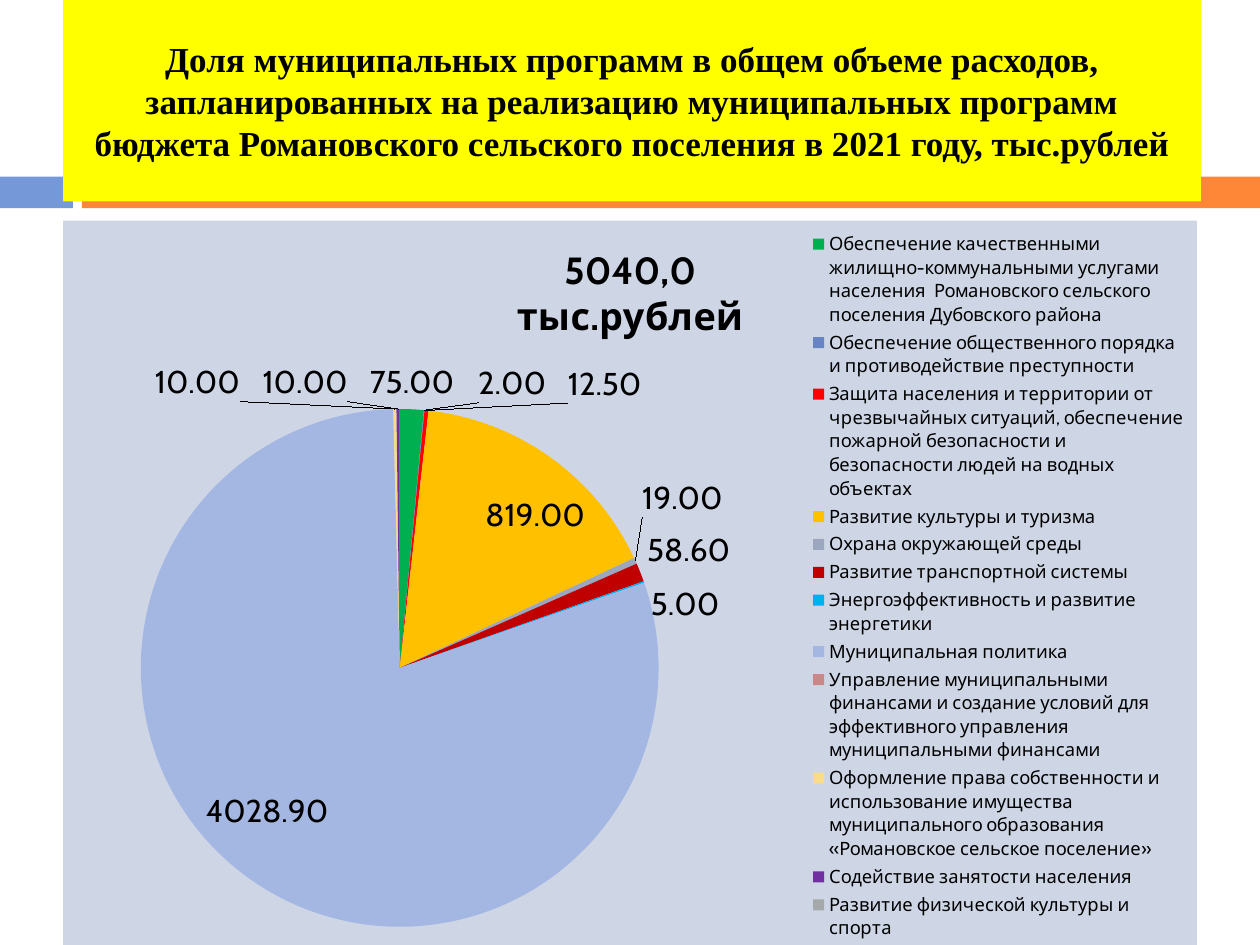
import pptx
import pptx.chart.data
import pptx.dml.color
import pptx.enum.chart
import pptx.enum.shapes
import pptx.enum.text
import pptx.oxml
import pptx.oxml.ns
import pptx.util

Cm = pptx.util.Cm
Pt = pptx.util.Pt
qn = pptx.oxml.ns.qn
LabelPos = pptx.enum.chart.XL_LABEL_POSITION


class Theme:
    """Colours, fonts and type sizes of the slide."""
    blue, orange, yellow = "7598D9", "FE8637", "FFFF00"
    panel, text = "CED6E6", "000000"
    title_font, chart_font = "Times New Roman", "Cabin"
    title_size, chart_title_size = 20, 21.6
    label_size, legend_size = 18, 10.5


# Programme, thousand roubles, colour, label shift (percent of chart width, height)
PROGRAMMES = [
    ("Обеспечение качественными жилищно-коммунальными услугами населения  "
     "Романовского сельского поселения Дубовского района", 75, "00B050", (0, 0)),
    ("Обеспечение общественного порядка и противодействие преступности",
     2, "6685C2", (4.7, 0)),
    ("Защита населения и территории от чрезвычайных ситуаций, обеспечение пожарной "
     "безопасности и безопасности людей на водных объектах", 12.5, "FF0000", (12.4, 0)),
    ("Развитие культуры и туризма", 819, "FFC000", (5.3, -6.5)),
    ("Охрана окружающей среды", 19, "9CA6BE", (0, -5.6)),
    ("Развитие транспортной системы", 58.6, "C00000", (0, 0)),
    ("Энергоэффективность и развитие энергетики", 5, "00B0F0", (0, 6.1)),
    ("Муниципальная политика", 4028.9, "A4B6E2", (-5.2, 5.1)),
    ("Управление муниципальными финансами и создание условий для эффективного "
     "управления муниципальными финансами", 0, "CA8787", None),
    ("Оформление права собственности и использование имущества муниципального "
     "образования «Романовское сельское поселение»", 10, "F9DC8A", (-17.4, 0)),
    ("Содействие занятости населения", 10, "7030A0", (-8.2, 0)),
    ("Развитие физической культуры и спорта", 0, "A5A9A9", None),
]
LARGE_SLICE = 500  # slices above this carry their label inside


def rgb(value):
    return pptx.dml.color.RGBColor.from_string(value)


def layout_xml(x, y, w=None, h=None, inner=False, edge=True):
    """Manual chart layout in percent; without edge, x and y are shifts."""
    parts = []
    if inner:
        parts.append(("layoutTarget", "inner"))
    if edge:
        parts += [("xMode", "edge"), ("yMode", "edge")]
    parts += [("x", x / 100), ("y", y / 100)]
    if w:
        parts += [("w", w / 100), ("h", h / 100)]
    body = "".join(f'<c:{tag} val="{val}"/>' for tag, val in parts)
    return pptx.oxml.parse_xml(
        f'<c:layout {pptx.oxml.ns.nsdecls("c")}><c:manualLayout>{body}'
        '</c:manualLayout></c:layout>')


def set_layout(parent, after, layout):
    """Put a layout behind the child named after, replacing any earlier one."""
    for old in parent.findall(qn("c:layout")):
        parent.remove(old)
    if after is None:
        parent.insert(0, layout)
    else:
        parent.find(qn(after)).addnext(layout)


class SlideBuilder:
    def __init__(self, prs, theme):
        self.theme = theme
        self.s = prs.slides.add_slide(prs.slide_layouts[5])

    def style_font(self, font, name, size, bold=False):
        font.name, font.size, font.bold = name, Pt(size), bold
        font.color.rgb = rgb(self.theme.text)

    def bar(self, x, y, w, h, color):
        sp = self.s.shapes.add_shape(pptx.enum.shapes.MSO_SHAPE.RECTANGLE,
                                     Cm(x), Cm(y), Cm(w), Cm(h))
        sp.shadow.inherit = False
        sp.fill.solid()
        sp.fill.fore_color.rgb = rgb(color)
        sp.line.fill.background()

    def title(self, x, y, w, h, text):
        sp = self.s.shapes.title
        sp.left, sp.top, sp.width, sp.height = Cm(x), Cm(y), Cm(w), Cm(h)
        sp.fill.solid()
        sp.fill.fore_color.rgb = rgb(self.theme.yellow)
        tf = sp.text_frame
        tf.text = text
        tf.word_wrap = True
        tf.vertical_anchor = pptx.enum.text.MSO_ANCHOR.MIDDLE
        p = tf.paragraphs[0]
        p.alignment = pptx.enum.text.PP_ALIGN.CENTER
        self.style_font(p.runs[0].font, self.theme.title_font,
                        self.theme.title_size, True)
        # The title lies over the bars
        sp.element.getparent().append(sp.element)

    def pie(self, x, y, w, h, title, rows):
        t = self.theme
        data = pptx.chart.data.CategoryChartData(number_format="0.00")
        data.categories = [row[0] for row in rows]
        data.add_series("Series 1", [row[1] for row in rows])
        chart = self.s.shapes.add_chart(pptx.enum.chart.XL_CHART_TYPE.PIE,
                                        Cm(x), Cm(y), Cm(w), Cm(h), data).chart
        self.style_font(chart.font, t.chart_font, t.label_size)
        space = chart.element
        panel = pptx.oxml.parse_xml(
            f'<c:spPr {pptx.oxml.ns.nsdecls("c", "a")}><a:solidFill>'
            f'<a:srgbClr val="{t.panel}"/></a:solidFill>'
            '<a:ln><a:noFill/></a:ln></c:spPr>')
        space.find(qn("c:chart")).addnext(panel)

        # Chart title
        tf = chart.chart_title.text_frame
        tf.text = title
        for p in tf.paragraphs:
            self.style_font(p.runs[0].font, t.chart_font, t.chart_title_size, True)
        set_layout(space.find(".//" + qn("c:title")), "c:tx", layout_xml(39.7, 2.9))

        # Legend
        chart.has_legend = True
        legend = chart.legend
        legend.position = pptx.enum.chart.XL_LEGEND_POSITION.RIGHT
        legend.include_in_layout = False
        self.style_font(legend.font, t.chart_font, t.legend_size)
        set_layout(space.find(".//" + qn("c:legend")), "c:legendPos",
                   layout_xml(66, 1, 33, 99))

        # Slices
        plot = chart.plots[0]
        plot.vary_by_categories = True
        set_layout(space.find(".//" + qn("c:plotArea")), None,
                   layout_xml(6.7, 26, 46, 71.5, inner=True))
        series = plot.series[0]
        labels = series.data_labels
        labels.show_value = True
        labels.number_format = "0.00"
        labels.number_format_is_linked = False
        self.style_font(labels.font, t.chart_font, t.label_size)
        for i, (_, value, color, shift) in enumerate(rows):
            point = series.points[i]
            point.format.fill.solid()
            point.format.fill.fore_color.rgb = rgb(color)
            point.format.line.fill.background()
            self.slice_label(series, i, value, shift)
        leader = labels._element.find(qn("c:showLeaderLines"))
        if leader is None:
            leader = pptx.oxml.parse_xml(
                f'<c:showLeaderLines {pptx.oxml.ns.nsdecls("c")}/>')
            labels._element.append(leader)
        leader.set("val", "1")

    def slice_label(self, series, i, value, shift):
        label = series.points[i].data_label
        self.style_font(label.font, self.theme.chart_font, self.theme.label_size)
        label.position = (LabelPos.CENTER if value > LARGE_SLICE
                          else LabelPos.OUTSIDE_END)
        d_lbl = series.data_labels._element.findall(qn("c:dLbl"))[i]
        if shift is None:
            # Empty slices carry no label
            for child in list(d_lbl)[1:]:
                d_lbl.remove(child)
            d_lbl.append(pptx.oxml.parse_xml(
                f'<c:delete {pptx.oxml.ns.nsdecls("c")} val="1"/>'))
        elif any(shift):
            set_layout(d_lbl, "c:idx", layout_xml(*shift, edge=False))


def main():
    prs = pptx.Presentation()
    prs.slide_width, prs.slide_height = Cm(25.4), Cm(19.05)
    theme = Theme()
    b = SlideBuilder(prs, theme)
    # Bars under the heading
    b.bar(0, 3.56, 1.47, 0.64, theme.blue)
    b.bar(1.65, 3.56, 23.75, 0.64, theme.orange)
    # Heading and chart
    b.title(1.27, 0, 22.94, 4.06,
            "Доля муниципальных программ в общем объеме расходов, запланированных "
            "на реализацию муниципальных программ бюджета Романовского сельского "
            "поселения в 2021 году, тыс.рублей")
    b.pie(1.27, 4.45, 22.86, 14.6, "5040,0\nтыс.рублей", PROGRAMMES)
    prs.save("out.pptx")


if __name__ == "__main__":
    main()
